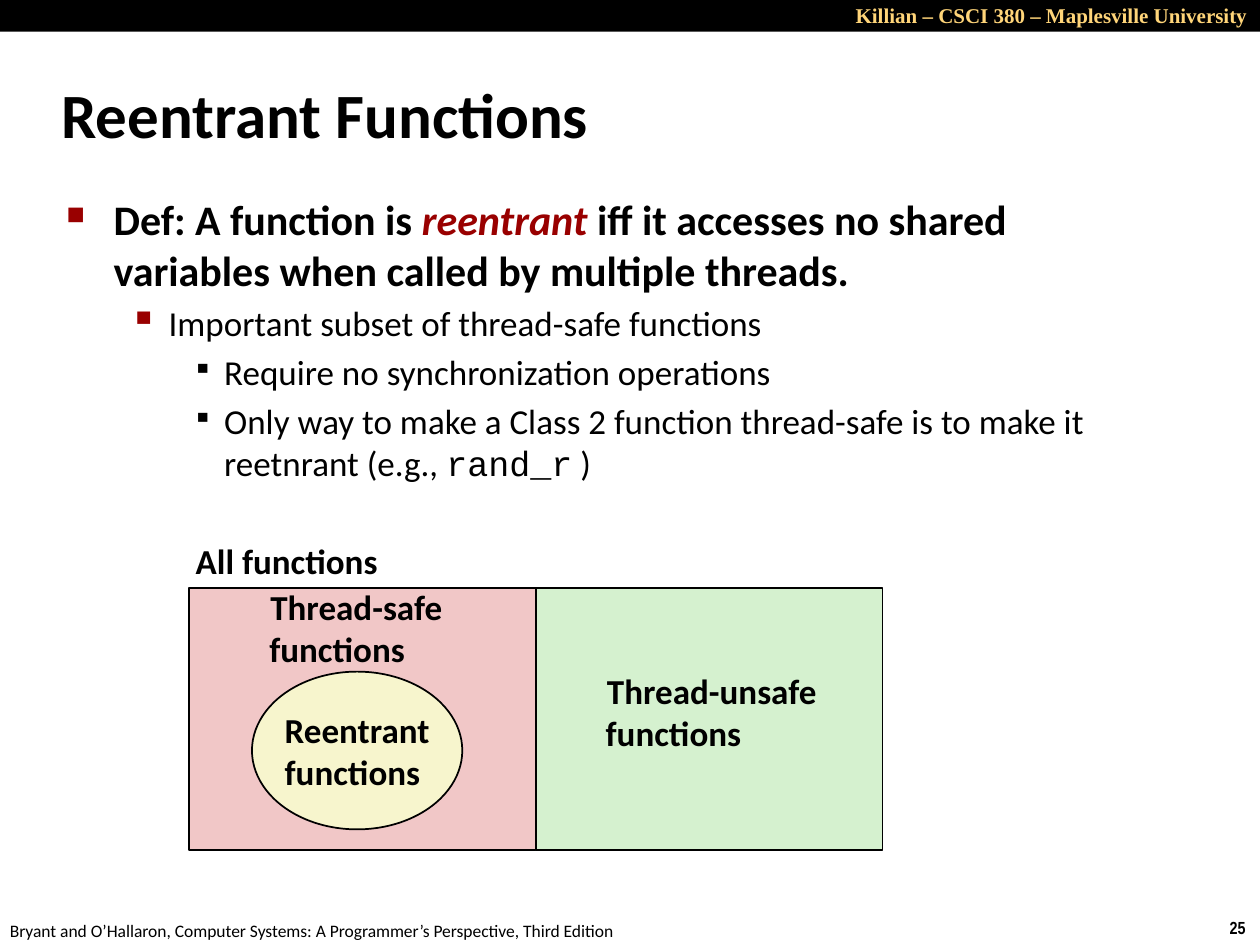
from lxml.etree import SubElement
from pptx import Presentation
from pptx.dml.color import RGBColor
from pptx.enum.shapes import MSO_SHAPE
from pptx.enum.text import MSO_ANCHOR, MSO_AUTO_SIZE, PP_ALIGN
from pptx.oxml.ns import qn
from pptx.util import Cm, Pt

THEME = {
    "black": "000000", "red": "990000", "gold": "FFD579",
    "safe": "F1C7C7", "unsafe": "D5F1CF", "reentrant": "F7F5CD",
    "font": "Calibri", "code": "Courier New", "head": "Times New Roman", "number": "Arial Narrow",
    "title": 36, "lead": 24, "text": 20, "header": 12, "small": 10,
}

TITLE = "Reentrant Functions"
HEADER = "Killian – CSCI 380 – Maplesville University"
FOOTER = "Bryant and O’Hallaron, Computer Systems: A Programmer’s Perspective, Third Edition"
PAGE = "25"

BODY = [
    (0, [("Def: A function is ", {}),
         ("reentrant ", {"italic": True, "color": "red"}),
         ("iff it accesses no shared variables when called by multiple threads.", {})]),
    (1, [("Important subset of thread-safe functions", {})]),
    (2, [("Require no synchronization operations", {})]),
    (2, [("Only way to make a Class 2 function thread-safe is to make it reetnrant (e.g., ", {}),
         ("rand_r", {"font": "code"}),
         (" )", {})]),
]

LEVELS = [
    {"left": 0.95, "hang": 0.95, "size": "lead", "bold": True, "char": "■", "scale": 60, "color": "red"},
    {"left": 2.06, "hang": 0.79, "size": "text", "bold": False, "char": "▪", "scale": 110, "color": "red"},
    {"left": 3.18, "hang": 0.64, "size": "text", "bold": False, "char": "▪", "scale": 80, "color": "black"},
]

SET_LEFT, SET_TOP, SET_W, SET_H = 3.81, 11.86, 6.99, 5.28
SETS = ["safe", "unsafe"]
LABELS = [
    (["All functions"], (3.66, 10.74, 4.24, 1.12)),
    (["Thread-unsafe", "functions"], (11.96, 13.36, 4.78, 1.96)),
    (["Thread-safe", "functions"], (5.18, 11.68, 4.01, 1.96)),
]


def rgb(name):
    return RGBColor.from_string(THEME[name])


def add_run(p, text, size="text", bold=False, italic=False, color="black", font="font"):
    r = p.add_run()
    r.text = text
    r.font.name = THEME[font]
    r.font.size = Pt(THEME[size])
    r.font.bold = bold
    r.font.italic = italic
    r.font.color.rgb = rgb(color)


def add_lines(tf, lines, align=PP_ALIGN.LEFT, **style):
    for i, line in enumerate(lines):
        p = tf.paragraphs[0] if i == 0 else tf.add_paragraph()
        p.alignment = align if i == 0 else PP_ALIGN.LEFT
        add_run(p, line, **style)


def add_box(s, at, wrap=True, anchor=MSO_ANCHOR.TOP, grow=False):
    tf = s.shapes.add_textbox(*map(Cm, at)).text_frame
    tf.word_wrap = wrap
    tf.vertical_anchor = anchor
    tf.auto_size = MSO_AUTO_SIZE.SHAPE_TO_FIT_TEXT if grow else MSO_AUTO_SIZE.NONE
    return tf


def add_fill(s, kind, at, fill, outlined=True):
    sp = s.shapes.add_shape(kind, *map(Cm, at))
    sp.shadow.inherit = False
    sp.fill.solid()
    sp.fill.fore_color.rgb = rgb(fill)
    if outlined:
        sp.line.color.rgb = rgb("black")
        sp.line.width = Pt(1)
    else:
        sp.line.fill.background()
    return sp


def add_bullet(p, level):
    pPr = p._p.get_or_add_pPr()
    pPr.set("marL", str(Cm(level["left"])))
    pPr.set("indent", str(-Cm(level["hang"])))
    color = SubElement(pPr, qn("a:buClr"))
    SubElement(color, qn("a:srgbClr"), val=THEME[level["color"]])
    SubElement(pPr, qn("a:buSzPct"), val=str(level["scale"] * 1000))
    SubElement(pPr, qn("a:buChar"), char=level["char"])


def add_body(s):
    tf = add_box(s, (1.09, 3.78, 21.95, 6.53))
    for i, (depth, runs) in enumerate(BODY):
        level = LEVELS[depth]
        p = tf.paragraphs[0] if i == 0 else tf.add_paragraph()
        p.level = depth
        p.space_before = Pt(THEME[level["size"]] * 0.2)
        add_bullet(p, level)
        for text, style in runs:
            add_run(p, text, size=level["size"], bold=level["bold"], **style)


def add_diagram(s):
    for i, name in enumerate(SETS):
        add_fill(s, MSO_SHAPE.RECTANGLE, (SET_LEFT + i * SET_W, SET_TOP, SET_W, SET_H), name)
    tf = add_fill(s, MSO_SHAPE.OVAL, (5.08, 13.54, 4.24, 3.18), "reentrant").text_frame
    tf.word_wrap = False
    tf.vertical_anchor = MSO_ANCHOR.MIDDLE
    add_lines(tf, ["Reentrant", "functions"], PP_ALIGN.CENTER, bold=True)
    for lines, at in LABELS:
        tf = add_box(s, at, wrap=False, anchor=MSO_ANCHOR.MIDDLE, grow=True)
        add_lines(tf, lines, PP_ALIGN.CENTER, bold=True)


def add_frame(s):
    add_lines(add_box(s, (24.54, 18.36, 0.86, 0.69), wrap=False, grow=True), [PAGE],
              size="small", bold=True, font="number")
    add_lines(add_box(s, (-0.05, 18.42, 12.9, 0.69), wrap=False, grow=True), [FOOTER], size="small")
    add_fill(s, MSO_SHAPE.RECTANGLE, (0, 0, 25.4, 0.64), "black", outlined=False)
    add_lines(add_box(s, (11.43, -0.08, 13.97, 0.76), grow=True), [HEADER], PP_ALIGN.RIGHT,
              size="header", bold=True, color="gold", font="head")
    add_lines(add_box(s, (0.99, 1.22, 21.08, 2.11), anchor=MSO_ANCHOR.MIDDLE), [TITLE],
              size="title", bold=True)


def main():
    prs = Presentation()
    prs.slide_width, prs.slide_height = Cm(25.4), Cm(19.05)
    s = prs.slides.add_slide(prs.slide_layouts[6])
    add_frame(s)
    add_body(s)
    add_diagram(s)
    prs.save("out.pptx")


if __name__ == "__main__":
    main()
